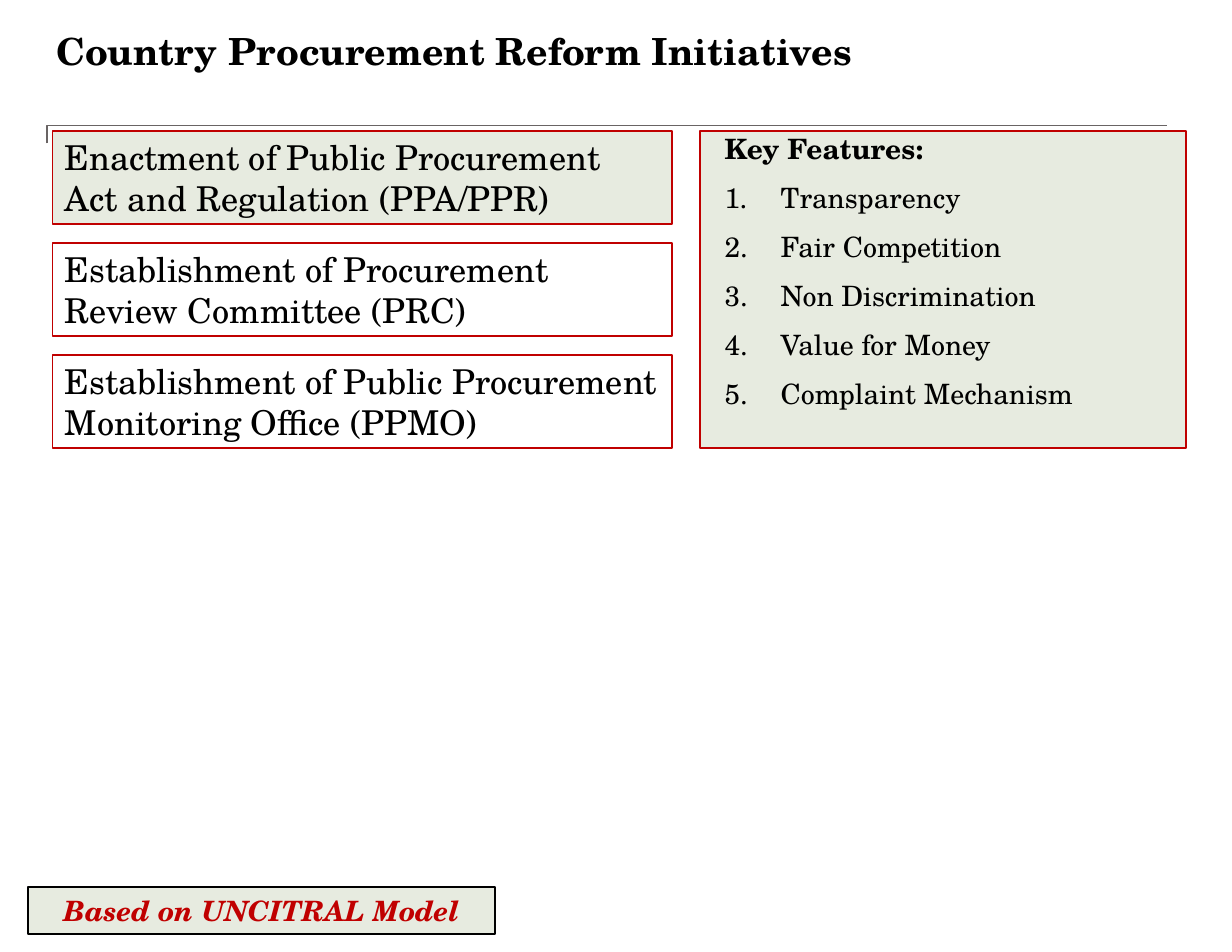
from dataclasses import dataclass
from typing import Optional

from lxml import etree
from pptx import Presentation
from pptx.dml.color import RGBColor
from pptx.enum.shapes import MSO_CONNECTOR, MSO_SHAPE
from pptx.enum.text import MSO_ANCHOR, MSO_AUTO_SIZE, PP_ALIGN
from pptx.oxml.ns import qn
from pptx.util import Inches, Pt

RECT = MSO_SHAPE.RECTANGLE
ELBOW = MSO_CONNECTOR.ELBOW
TOP, MIDDLE = MSO_ANCHOR.TOP, MSO_ANCHOR.MIDDLE
LEFT, CENTER = PP_ALIGN.LEFT, PP_ALIGN.CENTER


@dataclass(frozen=True)
class Theme:
    font: str = "TeX Gyre Schola"
    black: str = "000000"
    red: str = "C00000"
    pale: str = "E7EBE0"
    grey: str = "696464"
    head: int = 24
    large: int = 22
    body: int = 18


@dataclass(frozen=True)
class Box:
    x: float
    y: float
    w: float
    h: float
    line: str
    fill: Optional[str] = None


THEME = Theme()


def color(code: str) -> RGBColor:
    return RGBColor.from_string(code)


def set_frame(frame, anchor=TOP, side: float = 0, edge: float = 0) -> None:
    frame.word_wrap = True
    frame.auto_size = MSO_AUTO_SIZE.NONE
    frame.vertical_anchor = anchor
    frame.margin_left = frame.margin_right = Inches(side)
    frame.margin_top = frame.margin_bottom = Inches(edge)


def write(para, text: str, *, size: int, ink: str = THEME.black,
          bold: bool = False, italic: bool = False, align=LEFT) -> None:
    para.alignment = align
    run = para.add_run()
    run.text = text
    font = run.font
    font.name, font.size = THEME.font, Pt(size)
    font.bold, font.italic = bold, italic
    font.color.rgb = color(ink)


def draw_box(slide, box: Box):
    shape = slide.shapes.add_shape(
        RECT, Inches(box.x), Inches(box.y), Inches(box.w), Inches(box.h))
    shape.shadow.inherit = False
    if box.fill:
        shape.fill.solid()
        shape.fill.fore_color.rgb = color(box.fill)
    else:
        shape.fill.background()
    shape.line.color.rgb = color(box.line)
    shape.line.width = Pt(1)
    return shape


def label(slide, box: Box, text: str, **style) -> None:
    frame = draw_box(slide, box).text_frame
    set_frame(frame, MIDDLE, 0.11, 0.06)
    write(frame.paragraphs[0], text, **style)


def draw_rule(slide) -> None:
    rule = slide.shapes.add_connector(
        ELBOW, Inches(0.42), Inches(1.28), Inches(10.42), Inches(1.12))
    rule.line.color.rgb = color(THEME.grey)
    rule.line.width = Pt(1)
    props = rule.element.spPr
    etree.SubElement(props, qn("a:effectLst"))
    # Put the bend at the left end
    guides = props.find(qn("a:prstGeom")).find(qn("a:avLst"))
    etree.SubElement(guides, qn("a:gd"), name="adj1", fmla="val 0")


def indent(para, number: bool) -> None:
    para.level = 1
    para.space_before, para.space_after = Pt(6.7), Pt(3.3)
    props = para._p.get_or_add_pPr()
    props.set("marL", str(Inches(0.72)))
    props.set("indent", str(Inches(-0.5)))
    if number:
        etree.SubElement(props, qn("a:buFont"), typeface="+mj-lt")
        etree.SubElement(props, qn("a:buAutoNum"), type="arabicPeriod")
    else:
        etree.SubElement(props, qn("a:buNone"))


def draw_list(slide, box: Box, head: str, items: list[str]) -> None:
    frame = draw_box(slide, box).text_frame
    set_frame(frame)
    for row, text in enumerate([head, *items]):
        para = frame.add_paragraph() if row else frame.paragraphs[0]
        indent(para, row > 0)
        write(para, text, size=THEME.body, bold=row == 0)


def main() -> None:
    deck = Presentation()
    deck.slide_width, deck.slide_height = Inches(11), Inches(8.5)
    slide = deck.slides.add_slide(deck.slide_layouts[5])

    # Title and rule
    title = slide.shapes.title
    title.left, title.top = Inches(0.5), Inches(0.25)
    title.width, title.height = Inches(9.84), Inches(1)
    set_frame(title.text_frame)
    write(title.text_frame.paragraphs[0],
          "Country Procurement Reform Initiatives",
          size=THEME.head, bold=True)
    draw_rule(slide)

    # Reform steps, the first one highlighted
    steps = [
        "Enactment of Public Procurement Act and Regulation (PPA/PPR)",
        "Establishment of Procurement Review Committee (PRC)",
        "Establishment of Public Procurement Monitoring Office (PPMO)",
    ]
    for row, text in enumerate(steps):
        fill = None if row else THEME.pale
        box = Box(0.47, 1.17 + row, 5.53, 0.83, THEME.red, fill)
        label(slide, box, text, size=THEME.large)

    # Key features
    draw_list(slide, Box(6.25, 1.17, 4.34, 2.83, THEME.red, THEME.pale),
              "Key Features:",
              ["Transparency", "Fair Competition", "Non Discrimination",
               "Value for Money", "Complaint Mechanism"])

    # Basis note
    label(slide, Box(0.25, 7.92, 4.17, 0.42, THEME.black, THEME.pale),
          "Based on UNCITRAL Model", size=THEME.body, ink=THEME.red,
          bold=True, italic=True, align=CENTER)

    deck.save("out.pptx")


if __name__ == "__main__":
    main()
